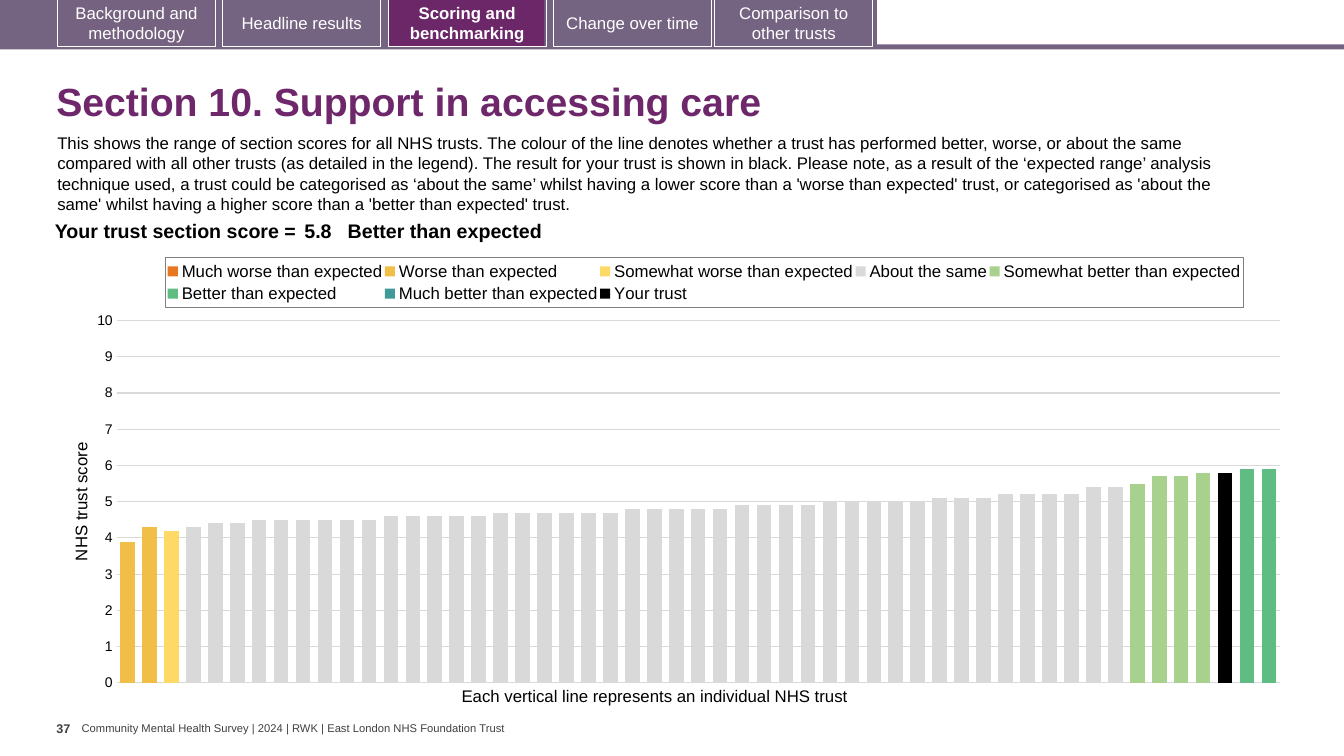
import copy
from dataclasses import dataclass
from typing import Optional

import lxml.etree
import pptx
import pptx.chart.data
import pptx.dml.color
import pptx.enum.chart
import pptx.enum.shapes
import pptx.enum.text
import pptx.oxml
import pptx.oxml.ns
import pptx.util

# Grid: columns and rows of a tenth of an inch
CELL = pptx.util.Inches(0.1)
COLUMNS, ROWS = 133.33, 75
qn = pptx.oxml.ns.qn
ALIGN = pptx.enum.text.PP_ALIGN
ANCHOR = pptx.enum.text.MSO_ANCHOR
BLACK, WHITE, GREY, PURPLE, BAR = "000000", "FFFFFF", "404040", "6D276A", "756382"


@dataclass
class Box:
    left: float
    top: float
    width: float
    height: float

    def lengths(self) -> list:
        return [grid(n) for n in (self.left, self.top, self.width, self.height)]


@dataclass
class Tab:
    label: str
    left: float
    fill: Optional[str] = None
    active: bool = False


@dataclass
class Label:
    text: str
    box: Box
    size: float
    color: str = BLACK
    bold: bool = False
    wrap: bool = True
    insets: tuple = (1, 0.5)
    anchor: ANCHOR = ANCHOR.TOP
    spacing: float = 1.0


@dataclass
class Band:
    name: str
    color: str
    first: int = 0
    scores: tuple = ()


BARS = [
    (Box(0, 4.4, COLUMNS, 0.5), BAR),
    (Box(0, 0, 87, 4.7), BAR),
    (Box(5.9, 0, 15.4, 4.6), "746280"),
    (Box(38.6, 0, 15.4, 4.6), "6B2768"),
]
TABS = [
    Tab("Background and methodology", 5.7, "746280"),
    Tab("Headline results", 22.1),
    Tab("Scoring and benchmarking", 38.5, active=True),
    Tab("Change over time", 54.9, BAR),
    Tab("Comparison to other trusts", 70.9, BAR),
]
LABELS = [
    Label("Community Mental Health Survey | 2024 | RWK | East London NHS Foundation Trust",
          Box(8.1, 71.6, 42.6, 1.3), 8, GREY, wrap=False, insets=(0, 0), anchor=ANCHOR.MIDDLE),
    Label("Section 10. Support in accessing care", Box(4.6, 6.7, 124.9, 7.2), 28, PURPLE,
          bold=True, anchor=ANCHOR.MIDDLE, spacing=0.9),
    Label("37", Box(5.6, 71, 2.5, 4), 9, GREY, bold=True, wrap=False, insets=(0, 0.5)),
    Label("This shows the range of section scores for all NHS trusts. The colour of the line "
          "denotes whether a trust has performed better, worse, or about the same compared with "
          "all other trusts (as detailed in the legend). The result for your trust is shown in "
          "black. Please note, as a result of the ‘expected range’ analysis technique used, a "
          "trust could be categorised as ‘about the same’ whilst having a lower score than a "
          "'worse than expected' trust, or categorised as 'about the same' whilst having a "
          "higher score than a 'better than expected' trust.",
          Box(4.7, 12.7, 121.3, 9.1), 12),
    Label("Each vertical line represents an individual NHS trust",
          Box(44.8, 67.5, 41.1, 3), 12, wrap=False),
]
TRUSTS = 53
SAME = ((4.3,) + (4.4,) * 2 + (4.5,) * 6 + (4.6,) * 5 + (4.7,) * 6 + (4.8,) * 5
        + (4.9,) * 4 + (5,) * 5 + (5.1,) * 3 + (5.2,) * 4 + (5.4,) * 2)
BANDS = [
    Band("Much worse than expected", "E87722"),
    Band("Worse than expected", "F1BE48", 0, (3.9, 4.3)),
    Band("Somewhat worse than expected", "FFD966", 2, (4.2,)),
    Band("About the same", "D9D9D9", 3, SAME),
    Band("Somewhat better than expected", "A9D18E", 46, (5.5, 5.7, 5.7, 5.8)),
    Band("Better than expected", "5FBD83", 50, (5.8, 5.9, 5.9)),
    Band("Much better than expected", "419999"),
    Band("Your trust", BLACK, 50, (5.8,)),
]


def grid(count: float) -> int:
    return round(count * CELL)


def rgb(color: str) -> pptx.dml.color.RGBColor:
    return pptx.dml.color.RGBColor.from_string(color)


def style(font, size: float, color: str, bold: bool = False, name: str = "Arial") -> None:
    font.name, font.size, font.bold = name, pptx.util.Pt(size), bold
    font.color.rgb = rgb(color)


def add_rectangle(slide, box: Box, fill: Optional[str], line: Optional[str] = None):
    shape = slide.shapes.add_shape(pptx.enum.shapes.MSO_SHAPE.RECTANGLE, *box.lengths())
    shape.shadow.inherit = False
    if fill:
        shape.fill.solid()
        shape.fill.fore_color.rgb = rgb(fill)
    else:
        shape.fill.background()
    if line:
        shape.line.color.rgb, shape.line.width = rgb(line), pptx.util.Pt(0.75)
    else:
        shape.line.fill.background()
    return shape


def add_tab(slide, tab: Tab) -> None:
    frame = add_rectangle(slide, Box(tab.left, -0.1, 15.7, 4.7), tab.fill, WHITE).text_frame
    frame.text, frame.word_wrap, frame.vertical_anchor = tab.label, True, ANCHOR.MIDDLE
    frame.paragraphs[0].alignment = ALIGN.CENTER
    style(frame.paragraphs[0].runs[0].font, 12, WHITE, tab.active)


def add_label(slide, label: Label) -> None:
    frame = slide.shapes.add_textbox(*label.box.lengths()).text_frame
    frame.text, frame.word_wrap, frame.vertical_anchor = label.text, label.wrap, label.anchor
    frame.margin_left = frame.margin_right = grid(label.insets[0])
    frame.margin_top = frame.margin_bottom = grid(label.insets[1])
    frame.paragraphs[0].line_spacing = label.spacing
    style(frame.paragraphs[0].runs[0].font, label.size, label.color, label.bold)


def add_score_table(slide) -> None:
    table = slide.shapes.add_table(1, 3, *Box(3.5, 21.5, 116.9, 3.1).lengths()).table
    table.first_row = table.horz_banding = False
    entries = [("Your trust section score =", 26.3, 0.4), ("5.8", 4.7, 0.4),
               ("Better than expected", 85.9, 0)]
    for index, (text, width, inset) in enumerate(entries):
        table.columns[index].width = grid(width)
        cell = table.cell(0, index)
        cell.fill.background()
        cell.margin_left = cell.margin_right = grid(inset)
        cell.margin_top = cell.margin_bottom = grid(0.4)
        cell.text_frame.text = text
        paragraph = cell.text_frame.paragraphs[0]
        paragraph.alignment = ALIGN.LEFT if index else ALIGN.RIGHT
        style(paragraph.runs[0].font, 14, BLACK, True)


def chart_xml(body: str):
    return pptx.oxml.parse_xml(body.replace(">", f" {pptx.oxml.ns.nsdecls('c', 'a')}>", 1))


def set_layout(parent, position: int, shares: tuple, inner: bool) -> None:
    for old in parent.findall(qn("c:layout")):
        parent.remove(old)
    target = '<c:layoutTarget val="inner"/>' if inner else ""
    modes = "".join(f'<c:{side}Mode val="edge"/>' for side in "xy")
    values = "".join(f'<c:{side} val="{share}"/>' for side, share in zip("xywh", shares))
    parent.insert(position, chart_xml(
        f"<c:layout><c:manualLayout>{target}{modes}{values}</c:manualLayout></c:layout>"))


def move_last_series_right(plot_area) -> None:
    left_bars = plot_area.find(qn("c:barChart"))
    right_bars = copy.deepcopy(left_bars)
    left_bars.remove(left_bars.findall(qn("c:ser"))[-1])
    for series in right_bars.findall(qn("c:ser"))[:-1]:
        right_bars.remove(series)
    left_bars.addnext(right_bars)
    category, value = (copy.deepcopy(plot_area.find(qn(tag))) for tag in ("c:catAx", "c:valAx"))
    plot_area.find(qn("c:valAx")).addnext(value)
    value.addnext(category)
    for tag in ("c:majorGridlines", "c:title"):
        value.remove(value.find(qn(tag)))
    for tag, setting in (("c:axPos", "r"), ("c:majorTickMark", "out"),
                         ("c:tickLblPos", "none"), ("c:crosses", "max")):
        value.find(qn(tag)).set("val", setting)
    ids = [node.get("val") for node in right_bars.findall(qn("c:axId"))]
    renamed = dict(zip(ids, ("5001", "5002")))
    for part in (right_bars, category, value):
        for node in part.findall(qn("c:axId")) + part.findall(qn("c:crossAx")):
            node.set("val", renamed[node.get("val")])


def add_score_chart(slide) -> None:
    data = pptx.chart.data.CategoryChartData()
    data.categories = [str(number + 1) for number in range(TRUSTS)]
    for band in BANDS:
        after = TRUSTS - band.first - len(band.scores)
        data.add_series(band.name, [None] * band.first + list(band.scores) + [None] * after)
    chart = slide.shapes.add_chart(pptx.enum.chart.XL_CHART_TYPE.COLUMN_CLUSTERED,
                                   *Box(6.7, 24.7, 121.5, 44.4).lengths(), data).chart
    style(chart.font, 10, BLACK, name="Calibri")
    chart.has_title = False
    plot = chart.plots[0]
    plot.gap_width, plot.overlap, plot.vary_by_categories = 50, 100, False
    for series, band in zip(plot.series, BANDS):
        series.format.fill.solid()
        series.format.fill.fore_color.rgb = rgb(band.color)
    # Axes
    chart.category_axis.visible = False
    axis = chart.value_axis
    axis.minimum_scale, axis.maximum_scale, axis.major_unit = 0, 10, 1
    axis.major_tick_mark = axis.minor_tick_mark = pptx.enum.chart.XL_TICK_MARK.NONE
    axis.format.line.fill.background()
    gridline = axis.major_gridlines.format.line
    gridline.color.rgb, gridline.width = rgb("D9D9D9"), pptx.util.Pt(0.75)
    style(axis.tick_labels.font, 10, BLACK)
    axis.axis_title.text_frame.text = "NHS trust score"
    style(axis.axis_title.text_frame.paragraphs[0].runs[0].font, 12, BLACK)
    # Legend
    chart.has_legend = True
    legend = chart.legend
    legend.position = pptx.enum.chart.XL_LEGEND_POSITION.TOP
    legend.include_in_layout = False
    style(legend.font, 12, BLACK)
    legend_node = chart._chartSpace.chart.find(qn("c:legend"))
    set_layout(legend_node, 1, (0.08, 0.02, 0.88, 0.11), False)
    legend_node.find(qn("c:overlay")).addnext(chart_xml(
        '<c:spPr><a:ln w="9525"><a:solidFill><a:srgbClr val="7F7F7F"/></a:solidFill></a:ln></c:spPr>'))
    # Right axis for the trust's own bar
    plot_area = chart._chartSpace.chart.plotArea
    set_layout(plot_area, 0, (0.04, 0.16, 0.95, 0.81), True)
    move_last_series_right(plot_area)


def main() -> None:
    presentation = pptx.Presentation()
    presentation.slide_width, presentation.slide_height = grid(COLUMNS), grid(ROWS)
    slide = presentation.slides.add_slide(presentation.slide_layouts[6])
    for box, fill in BARS:
        add_rectangle(slide, box, fill)
    for tab in TABS:
        add_tab(slide, tab)
    for label in LABELS:
        add_label(slide, label)
    add_score_chart(slide)
    add_score_table(slide)
    presentation.save("out.pptx")


if __name__ == "__main__":
    main()
